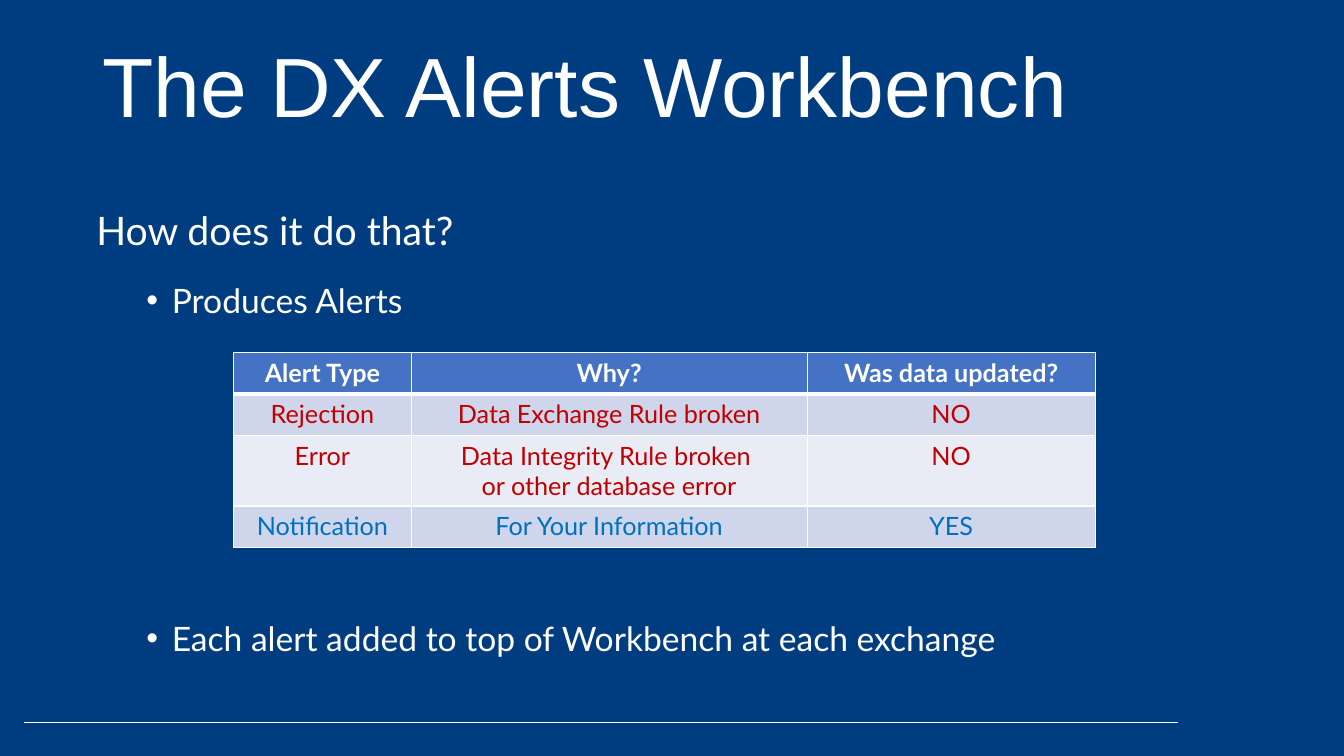
from lxml.etree import SubElement
from pptx import Presentation
from pptx.dml.color import RGBColor
from pptx.enum.shapes import MSO_CONNECTOR
from pptx.enum.text import MSO_ANCHOR, PP_ALIGN
from pptx.oxml.ns import qn
from pptx.util import Cm, Pt

# Content
TITLE = "The DX Alerts Workbench"
# text, size, line spacing, space before, bullet
BODY = [
    ("How does it do that?", 28, 0, False),
    ("Produces Alerts", 24, 5, True),
    ("Each alert added to top of Workbench at each exchange", 24, 198, True),
]
ROWS = [
    ("Alert Type", "Why?", "Was data updated?"),
    ("Rejection", "Data Exchange Rule broken", "NO"),
    ("Error", "Data Integrity Rule broken \nor other database error", "NO"),
    ("Notification", "For Your Information", "YES"),
]

# Colours
NAVY = RGBColor(0x00, 0x3D, 0x80)
WHITE = RGBColor(0xFF, 0xFF, 0xFF)
BLUE = RGBColor(0x44, 0x72, 0xC4)
DARK = RGBColor(0xCF, 0xD5, 0xEA)
PALE = RGBColor(0xE9, 0xEB, 0xF5)
RED = RGBColor(0xC0, 0x00, 0x00)
SKY = RGBColor(0x00, 0x70, 0xC0)

# Row fill, text colour and height in cm
STYLES = [(BLUE, WHITE, 1.04), (DARK, RED, 1.04), (PALE, RED, 1.78), (DARK, SKY, 1.04)]
WIDTHS = [4.47, 9.98, 7.26]


def set_font(para, name, size, color, bold=False):
    font = para.font
    font.name, font.size, font.bold = name, Pt(size), bold
    font.color.rgb = color


def add_box(slide, left, top, width, height):
    frame = slide.shapes.add_textbox(Cm(left), Cm(top), Cm(width), Cm(height)).text_frame
    frame.word_wrap = True
    frame.vertical_anchor = MSO_ANCHOR.TOP
    return frame


def add_bullet(para):
    props = para._p.get_or_add_pPr()
    props.set("marL", str(Cm(1.9)))
    props.set("indent", str(-Cm(0.64)))
    SubElement(props, qn("a:buFont")).set("typeface", "Arial")
    SubElement(props, qn("a:buChar")).set("char", "•")


def add_edges(cell, head):
    props = cell._tc.get_or_add_tcPr()
    for side in "LRTB":
        width = 3 if head and side == "B" else 1
        edge = SubElement(props, qn(f"a:ln{side}"), w=str(Pt(width)))
        fill = SubElement(edge, qn("a:solidFill"))
        SubElement(fill, qn("a:srgbClr")).set("val", str(WHITE))


# Slide
deck = Presentation()
deck.slide_width, deck.slide_height = Cm(33.87), Cm(19.05)
slide = deck.slides.add_slide(deck.slide_layouts[6])
slide.background.fill.solid()
slide.background.fill.fore_color.rgb = NAVY

# Bottom rule
rule = slide.shapes.add_connector(MSO_CONNECTOR.STRAIGHT, Cm(29.69), Cm(18.2), Cm(0.61), Cm(18.2))
rule.line.color.rgb = WHITE
rule.line.width = Pt(0.5)
SubElement(rule._element.spPr, qn("a:effectLst"))

# Title
para = add_box(slide, 2.33, 1.02, 29.21, 3.68).paragraphs[0]
para.text = TITLE
para.line_spacing = 0.9
set_font(para, "Arial", 60, WHITE)

# Body, with a gap for the table
frame = add_box(slide, 2.18, 4.47, 29.21, 11.2)
for i, (text, size, gap, bullet) in enumerate(BODY):
    para = frame.add_paragraph() if i else frame.paragraphs[0]
    para.text = text
    para.line_spacing = 1.5
    para.space_before = Pt(gap)
    if bullet:
        add_bullet(para)
    set_font(para, "Lato", size, WHITE)

# Alert table
high = sum(style[2] for style in STYLES)
table = slide.shapes.add_table(len(ROWS), len(WIDTHS), Cm(5.89), Cm(8.89),
                               Cm(sum(WIDTHS)), Cm(high)).table
for col, width in zip(table.columns, WIDTHS):
    col.width = Cm(width)
for r, (texts, (fill, color, height)) in enumerate(zip(ROWS, STYLES)):
    table.rows[r].height = Cm(height)
    for c, text in enumerate(texts):
        cell = table.cell(r, c)
        add_edges(cell, r == 0)
        cell.fill.solid()
        cell.fill.fore_color.rgb = fill
        cell.text = text
        for para in cell.text_frame.paragraphs:
            para.alignment = PP_ALIGN.CENTER
            set_font(para, "Lato", 18, color, r == 0)

deck.save("out.pptx")
